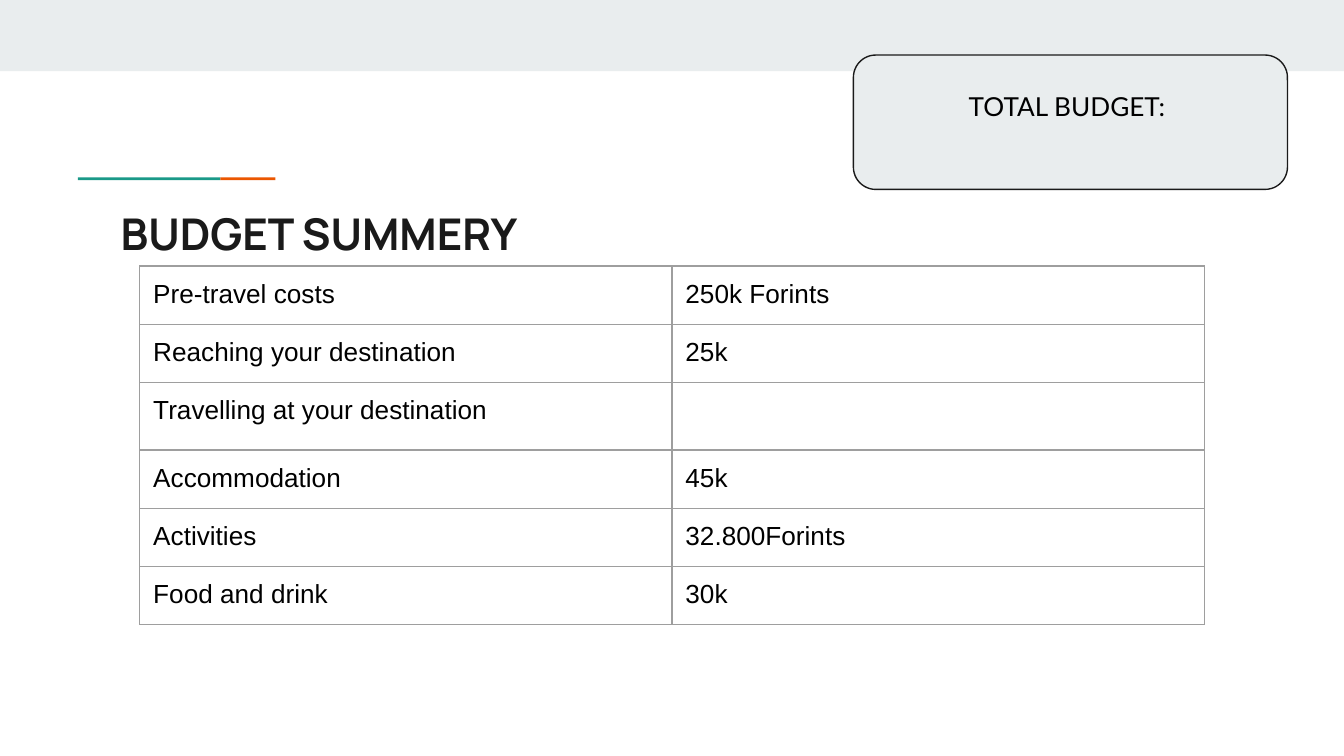
import pptx
import pptx.util
import pptx.dml.color
import pptx.enum.shapes
import pptx.enum.text
import pptx.oxml
import pptx.oxml.ns

Inches, Pt = pptx.util.Inches, pptx.util.Pt
Kind = pptx.enum.shapes.MSO_SHAPE
Align = pptx.enum.text.PP_ALIGN
Anchor = pptx.enum.text.MSO_ANCHOR

PALE, INK, BLACK, GREY = "E9EDEE", "1A1A1A", "000000", "9E9E9E"
GREEN, ORANGE = "1A9988", "EB5600"

COSTS = [
    ("Pre-travel costs", "250k Forints"),
    ("Reaching your destination", "25k"),
    ("Travelling at your destination", ""),
    ("Accommodation", "45k"),
    ("Activities", "32.800Forints"),
    ("Food and drink", "30k"),
]
BARS = [  # left, top, width, height, colour
    (0, 0, 10, 0.53, PALE),
    (0.58, 1.32, 1.06, 0.02, GREEN),
    (1.64, 1.32, 0.41, 0.02, ORANGE),
]
COL, ROW = 3.96, 0.42
PAD = 0.1
SIDES = ("left", "top", "right", "bottom")
SPACE = pptx.oxml.ns.nsdecls("a")


def tint(code):
    return pptx.dml.color.RGBColor.from_string(code)


def write(frame, text, size, face, color, bold=False):
    line = frame.paragraphs[0]
    run = line.add_run()
    run.text = text
    for name, value in {"size": Pt(size), "name": face, "bold": bold}.items():
        setattr(run.font, name, value)
    run.font.color.rgb = tint(color)
    return line


def pad(thing):
    for side in SIDES:
        setattr(thing, "margin_" + side, Inches(PAD))


def block(slide, kind, box, color):
    shape = slide.shapes.add_shape(kind, *map(Inches, box))
    shape.shadow.inherit = False
    shape.fill.solid()
    shape.fill.fore_color.rgb = tint(color)
    shape.line.fill.background()
    return shape


def edge(cell):
    """Draw a thin grey border on all four sides of a cell."""
    props = cell._tc.get_or_add_tcPr()
    for spot, side in enumerate("LRTB"):
        props.insert(spot, pptx.oxml.parse_xml(
            f'<a:ln{side} {SPACE} w="{Pt(0.75)}">'
            f'<a:solidFill><a:srgbClr val="{GREY}"/></a:solidFill></a:ln{side}>'))


def blank(cell):
    """Give an empty cell the font that sets its row's height."""
    cell.text_frame.paragraphs[0]._p.append(pptx.oxml.parse_xml(
        f'<a:endParaRPr {SPACE} sz="1800"><a:latin typeface="Arial"/></a:endParaRPr>'))


def main():
    deck = pptx.Presentation()
    deck.slide_width = Inches(10)
    deck.slide_height = deck.slide_width * 9 // 16
    slide = deck.slides.add_slide(deck.slide_layouts[6])

    for *box, color in BARS:
        block(slide, Kind.RECTANGLE, box, color)

    title = slide.shapes.add_textbox(*map(Inches, (0.8, 1.44, 8.41, 0.59)))
    title.text_frame.word_wrap = True
    pad(title.text_frame)
    write(title.text_frame, "BUDGET SUMMERY", 23.4, "Manrope", INK, True)

    grid = slide.shapes.add_table(
        len(COSTS), 2, *map(Inches, (1.04, 1.98, 2 * COL, len(COSTS) * ROW))).table
    grid.first_row = grid.horz_banding = False
    for row, pair in zip(grid.rows, COSTS):
        for cell, text in zip(row.cells, pair):
            pad(cell)
            cell.fill.background()
            edge(cell)
            if text:
                write(cell.text_frame, text, 14, "Arial", BLACK)
            else:
                blank(cell)

    total = block(slide, Kind.FLOWCHART_ALTERNATE_PROCESS,
                  (6.35, 0.41, 3.23, 1), PALE)
    total.line.color.rgb = tint(INK)
    total.line.width = Pt(0.75)
    frame = total.text_frame
    frame.word_wrap = True
    frame.vertical_anchor = Anchor.MIDDLE
    pad(frame)
    frame.margin_bottom = Inches(0.34)  # lifts the label above the middle
    write(frame, "TOTAL BUDGET: ", 14, "Lato", BLACK).alignment = Align.CENTER

    deck.save("out.pptx")


if __name__ == "__main__":
    main()
